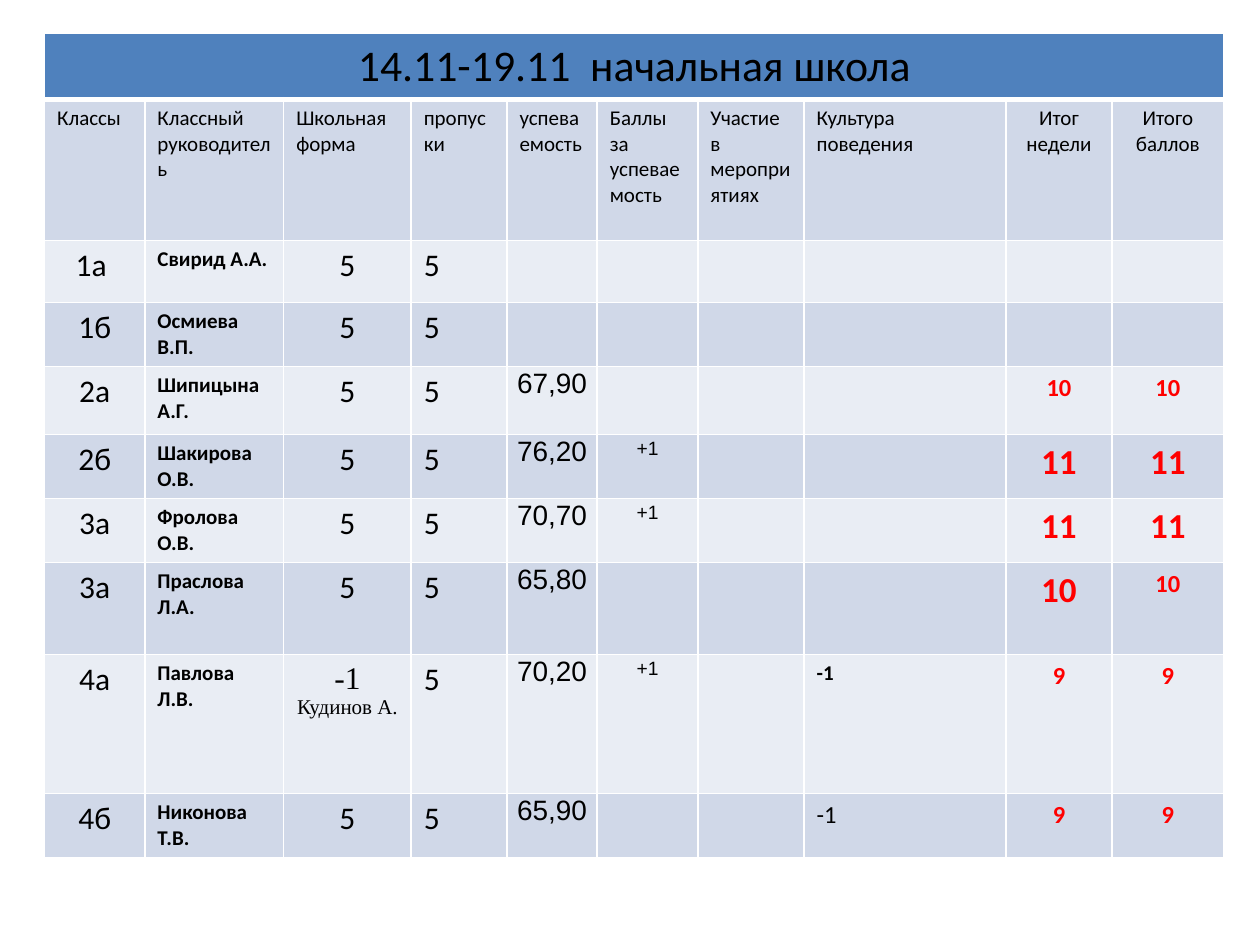
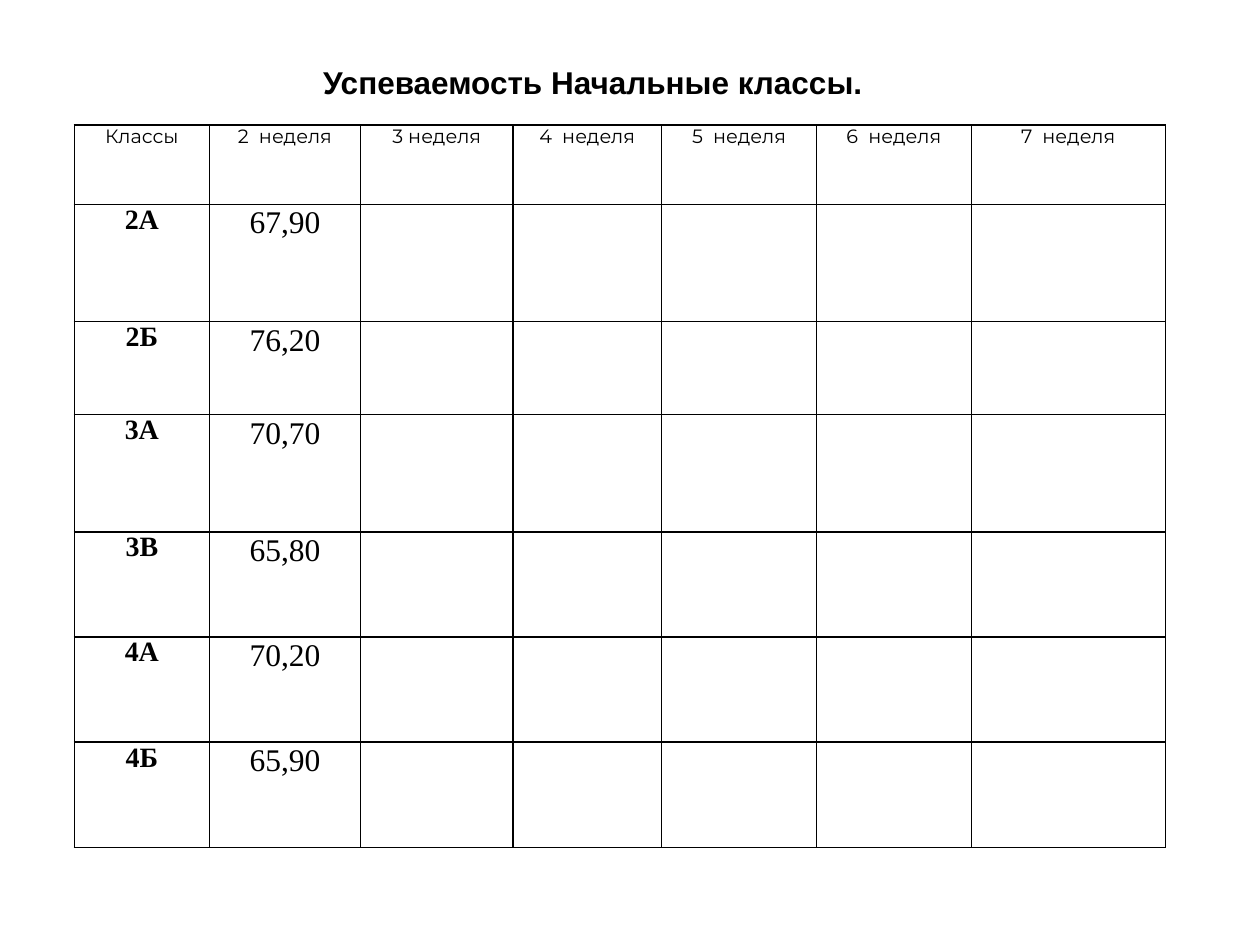
from dataclasses import dataclass
from lxml.etree import SubElement
from pptx import Presentation
from pptx.dml.color import RGBColor as Rgb
from pptx.enum.text import MSO_ANCHOR as Anchor, MSO_AUTO_SIZE as Auto, PP_ALIGN as Align
from pptx.oxml.ns import qn
from pptx.util import Cm, Pt


@dataclass
class Style:
    size: float
    font: str = "Calibri"
    bold: bool = False
    color: str = "000000"
    align: Align = Align.CENTER
    gap: float = 0
    line: float = 1
    pad: tuple = None


class Theme:
    black, white = "000000", "FFFFFF"
    blue, dark, light = "4F81BD", "D0D8E8", "E9EDF4"
    red = "FF0000"
    tight, side = (0.03, 0.03, 0.03, 0), (0.18, 0, 0.18, 0)
    # Score table
    banner = Style(25)
    head = Style(12, align=Align.LEFT)
    sum_head = Style(12)
    group = Style(18)
    name = Style(12, bold=True, align=Align.LEFT)
    skips = Style(18, align=Align.LEFT)
    rate = Style(16, "Arial", pad=tight)
    bonus = Style(11, "Arial", gap=3, line=1.15, pad=side)
    fault = Style(14, align=Align.LEFT)
    total = Style(14, bold=True, color=red)
    big = Style(20, bold=True, color=red)
    minus = Style(18, "Times New Roman")
    pupil = Style(12, "Times New Roman")
    # Progress table
    title = Style(18, "Arial", bold=True)
    week = Style(11, "Montserrat", gap=3, pad=side)
    label = Style(16, "Times New Roman", bold=True, gap=3, pad=side)
    value = Style(18, "Times New Roman", pad=tight)


def write(box, text, style):
    """Add one styled paragraph to a cell or shape."""
    frame = box.text_frame
    para = frame.add_paragraph() if frame.text else frame.paragraphs[0]
    para.alignment, para.line_spacing = style.align, style.line
    para.space_before = para.space_after = Pt(style.gap)
    run = para.add_run()
    run.text = text
    run.font.size, run.font.name, run.font.bold = Pt(style.size), style.font, style.bold
    run.font.color.rgb = Rgb.from_string(style.color)
    if style.pad:
        left, top, right, bottom = map(Cm, style.pad)
        box.margin_left, box.margin_top = left, top
        box.margin_right, box.margin_bottom = right, bottom


def grid(slide, left, top, cols, rows, ink, rule=1):
    """Add a plain ruled table; rule is the line width below the first row."""
    table = slide.shapes.add_table(len(rows), len(cols), Cm(left), Cm(top),
                                   Cm(sum(cols)), Cm(sum(rows))).table
    table.first_row = table.horz_banding = False
    for col, wide in zip(table.columns, cols):
        col.width = Cm(wide)
    for r, (row, high) in enumerate(zip(table.rows, rows)):
        row.height = Cm(high)
        for cell in row.cells:
            props = cell._tc.get_or_add_tcPr()
            for edge in ("lnL", "lnR", "lnT", "lnB"):
                wide = rule if (r, edge) in ((0, "lnB"), (1, "lnT")) else 1
                line = SubElement(props, qn("a:" + edge), w=str(Pt(wide)))
                fill = SubElement(line, qn("a:solidFill"))
                SubElement(fill, qn("a:srgbClr"), val=ink)
            cell.fill.background()
    return table


deck = Presentation()
deck.slide_width, deck.slide_height = Cm(25.4), Cm(19.05)

# Weekly scores
slide = deck.slides.add_slide(deck.slide_layouts[6])
table = grid(slide, 0.9, 0.67,
             [2.02, 2.8, 2.57, 1.93, 1.82, 2.03, 2.14, 4.07, 2.14, 2.25],
             [1.3, 2.85, 1.25, 1.29, 1.37, 1.29, 1.27, 1.86, 2.8, 1.25],
             Theme.white, rule=3)
for r, row in enumerate(table.rows):
    tint = Theme.blue if r == 0 else Theme.dark if r % 2 else Theme.light
    for cell in row.cells:
        cell.fill.solid()
        cell.fill.fore_color.rgb = Rgb.from_string(tint)

table.cell(0, 0).merge(table.cell(0, 9))
write(table.cell(0, 0), "14.11-19.11  начальная школа", Theme.banner)

heads = ["Классы", "Классный руководитель", "Школьная  форма", "пропуски",
         "успеваемость", "Баллы за успеваемость", "Участие  в мероприятиях",
         "Культура поведения", "Итог недели", "Итого баллов"]
for c, text in enumerate(heads):
    write(table.cell(1, c), text, Theme.head if c < 8 else Theme.sum_head)

scores = [
    ["1а ", "Свирид А.А.", "5", "5", "", "", "", "", "", ""],
    ["1б", "Осмиева В.П.", "5", "5", "", "", "", "", "", ""],
    ["2а", "Шипицына А.Г.", "5", "5", "67,90", "", "", "", "10", "10"],
    ["2б", "Шакирова О.В.", "5", "5", "76,20", "+1", "", "", "11", "11"],
    ["3а", "Фролова О.В.", "5", "5", "70,70", "+1", "", "", "11", "11"],
    ["3а", "Праслова Л.А.", "5", "5", "65,80", "", "", "", "10", "10"],
    ["4а", "Павлова Л.В.", "-1", "5", "70,20", "+1", "", "-1", "9", "9"],
    ["4б", "Никонова Т.В.", "5", "5", "65,90", "", "", "-1", "9", "9"],
]
looks = [Theme.group, Theme.name, Theme.group, Theme.skips, Theme.rate,
         Theme.bonus, Theme.bonus, Theme.fault, Theme.total, Theme.total]
odd = {(5, 8): Theme.big, (5, 9): Theme.big, (6, 8): Theme.big, (6, 9): Theme.big,
       (7, 8): Theme.big, (8, 2): Theme.minus, (8, 7): Theme.name}
for r, row in enumerate(scores, 2):
    for c, text in enumerate(row):
        if text:
            write(table.cell(r, c), text, odd.get((r, c), looks[c]))
write(table.cell(8, 2), "Кудинов А.", Theme.pupil)

# Progress by week
slide = deck.slides.add_slide(deck.slide_layouts[5])
title = slide.shapes.title
title.left, title.top, title.width, title.height = Cm(6.2), Cm(1.14), Cm(11.5), Cm(1.02)
write(title, "Успеваемость Начальные классы.", Theme.title)
title.text_frame.word_wrap = False
title.text_frame.auto_size = Auto.SHAPE_TO_FIT_TEXT
title.text_frame.vertical_anchor = Anchor.MIDDLE

table = grid(slide, 1.5, 2.52, [2.72, 3.05, 3.07, 3, 3.12, 3.12, 3.91],
             [1.6, 2.36, 1.88, 2.36, 2.12, 2.12, 2.12], Theme.black)
weeks = ["Классы", "2  неделя", "3 неделя", "4  неделя", "5  неделя",
         "6  неделя", "7  неделя"]
for c, text in enumerate(weeks):
    write(table.cell(0, c), text, Theme.week)
rates = [("2А", "67,90"), ("2Б", "76,20"), ("3А", "70,70"),
         ("3В", "65,80"), ("4А", "70,20"), ("4Б", "65,90")]
for r, (group, rate) in enumerate(rates, 1):
    write(table.cell(r, 0), group, Theme.label)
    write(table.cell(r, 1), rate, Theme.value)

deck.save("out.pptx")
